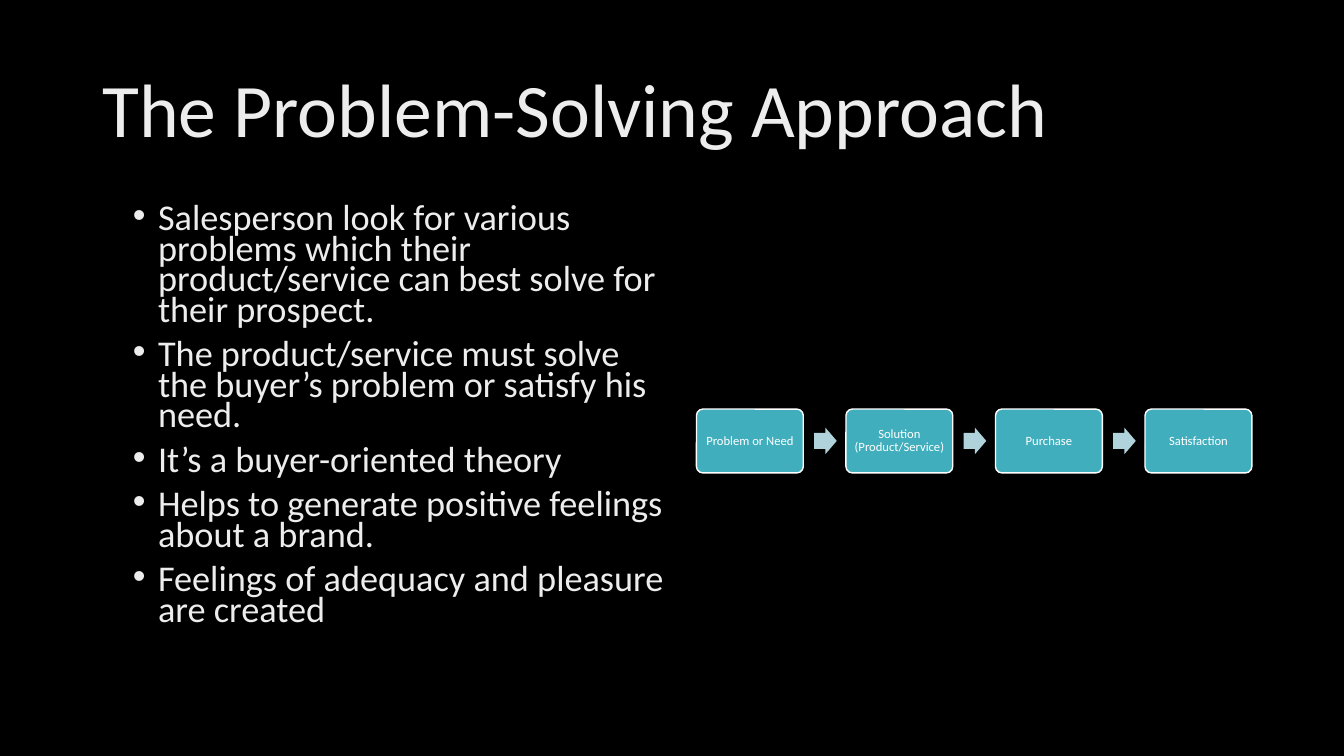
from dataclasses import dataclass
from typing import Any

from lxml import etree
from pptx import Presentation
from pptx.dml.color import RGBColor
from pptx.enum import shapes, text
from pptx.oxml import ns
from pptx.util import Pt

FONT = "Calibri"
BLACK, WHITE, PALE = "000000", "FFFFFF", "EDEDED"
TEAL, LIGHT_TEAL = "41AEBD", "B0D3DB"

TITLE = "The Problem-Solving Approach"
POINTS = [
    "Salesperson look for various problems which their product/service "
    "can best solve for their prospect.",
    "The product/service must solve the buyer’s problem or satisfy his need.",
    "It’s a buyer-oriented theory",
    "Helps to generate positive feelings about a brand.",
    "Feelings of adequacy and pleasure are created",
]
STEPS = ["Problem or Need", "Solution (Product/Service)", "Purchase", "Satisfaction"]
STEP_PITCH = 106.8


@dataclass
class Frame:
    left: float
    top: float
    width: float
    height: float

    def shifted(self, distance: float) -> "Frame":
        return Frame(self.left + distance, self.top, self.width, self.height)

    def lengths(self) -> list[int]:
        return [Pt(n) for n in (self.left, self.top, self.width, self.height)]


@dataclass
class TextStyle:
    size: float
    color: str
    line_spacing: float
    alignment: Any = text.PP_ALIGN.LEFT


TITLE_FRAME = Frame(66, 28.8, 828, 104.4)
BODY_FRAME = Frame(87.84, 144, 396, 342.72)
STEP_FRAME = Frame(497.5, 292.2, 76.3, 45.6)
ARROW_FRAME = Frame(581.5, 305.5, 16.2, 18.9)

TITLE_STYLE = TextStyle(54, PALE, 0.9)
BODY_STYLE = TextStyle(25.9, PALE, 0.7)
STEP_STYLE = TextStyle(9, WHITE, 0.9, text.PP_ALIGN.CENTER)


def rgb(value: str) -> RGBColor:
    return RGBColor.from_string(value)


def apply(target: Any, values: dict[str, Any]) -> None:
    for name, value in values.items():
        setattr(target, name, value)


def style_para(para: Any, style: TextStyle) -> None:
    apply(para, {"alignment": style.alignment, "line_spacing": style.line_spacing})
    apply(para.font, {"name": FONT, "size": Pt(style.size)})
    para.font.color.rgb = rgb(style.color)


def add_bullet(para: Any) -> None:
    properties = para._p.get_or_add_pPr()
    properties.set("marL", str(Pt(18)))
    properties.set("indent", str(-Pt(18)))
    font = etree.SubElement(properties, ns.qn("a:buFont"))
    font.set("typeface", "Arial")
    bullet = etree.SubElement(properties, ns.qn("a:buChar"))
    bullet.set("char", "•")


def add_title(page: Any) -> None:
    box = page.shapes.title
    names = ("left", "top", "width", "height")
    apply(box, dict(zip(names, TITLE_FRAME.lengths())))
    box.text_frame.text = TITLE
    apply(box.text_frame, {
        "word_wrap": True,
        "auto_size": text.MSO_AUTO_SIZE.NONE,
        "vertical_anchor": text.MSO_ANCHOR.MIDDLE,
    })
    style_para(box.text_frame.paragraphs[0], TITLE_STYLE)


def add_points(page: Any) -> None:
    frame = page.shapes.add_textbox(*BODY_FRAME.lengths()).text_frame
    frame.word_wrap = True
    for index, point in enumerate(POINTS):
        para = frame.add_paragraph() if index else frame.paragraphs[0]
        para.text = point
        add_bullet(para)
        style_para(para, BODY_STYLE)
        if index:
            para.space_before = Pt(10)


def add_block(page: Any, kind: Any, frame: Frame, fill: str,
              adjustments: list[float]) -> Any:
    box = page.shapes.add_shape(kind, *frame.lengths())
    box.shadow.inherit = False
    box.fill.solid()
    box.fill.fore_color.rgb = rgb(fill)
    box.line.fill.background()
    for index, value in enumerate(adjustments):
        box.adjustments[index] = value
    return box


def add_step(page: Any, label: str, frame: Frame) -> None:
    box = add_block(page, shapes.MSO_SHAPE.ROUNDED_RECTANGLE, frame, TEAL, [0.1])
    box.line.color.rgb = rgb(WHITE)
    box.line.width = Pt(1)
    box.text_frame.text = label
    sides = ("left", "top", "right", "bottom")
    apply(box.text_frame, {f"margin_{side}": Pt(4) for side in sides})
    apply(box.text_frame, {
        "word_wrap": True, "vertical_anchor": text.MSO_ANCHOR.MIDDLE,
    })
    style_para(box.text_frame.paragraphs[0], STEP_STYLE)


def main() -> None:
    deck = Presentation()
    apply(deck, {"slide_width": Pt(960), "slide_height": Pt(540)})
    page = deck.slides.add_slide(deck.slide_layouts[5])
    page.background.fill.solid()
    page.background.fill.fore_color.rgb = rgb(BLACK)

    # Title and bullet list
    add_title(page)
    add_points(page)

    # Process chain with an arrow between neighbouring steps
    for index, label in enumerate(STEPS):
        offset = index * STEP_PITCH
        add_step(page, label, STEP_FRAME.shifted(offset))
        if index < len(STEPS) - 1:
            add_block(page, shapes.MSO_SHAPE.RIGHT_ARROW,
                      ARROW_FRAME.shifted(offset), LIGHT_TEAL, [0.6, 0.5])

    deck.save("out.pptx")


if __name__ == "__main__":
    main()
